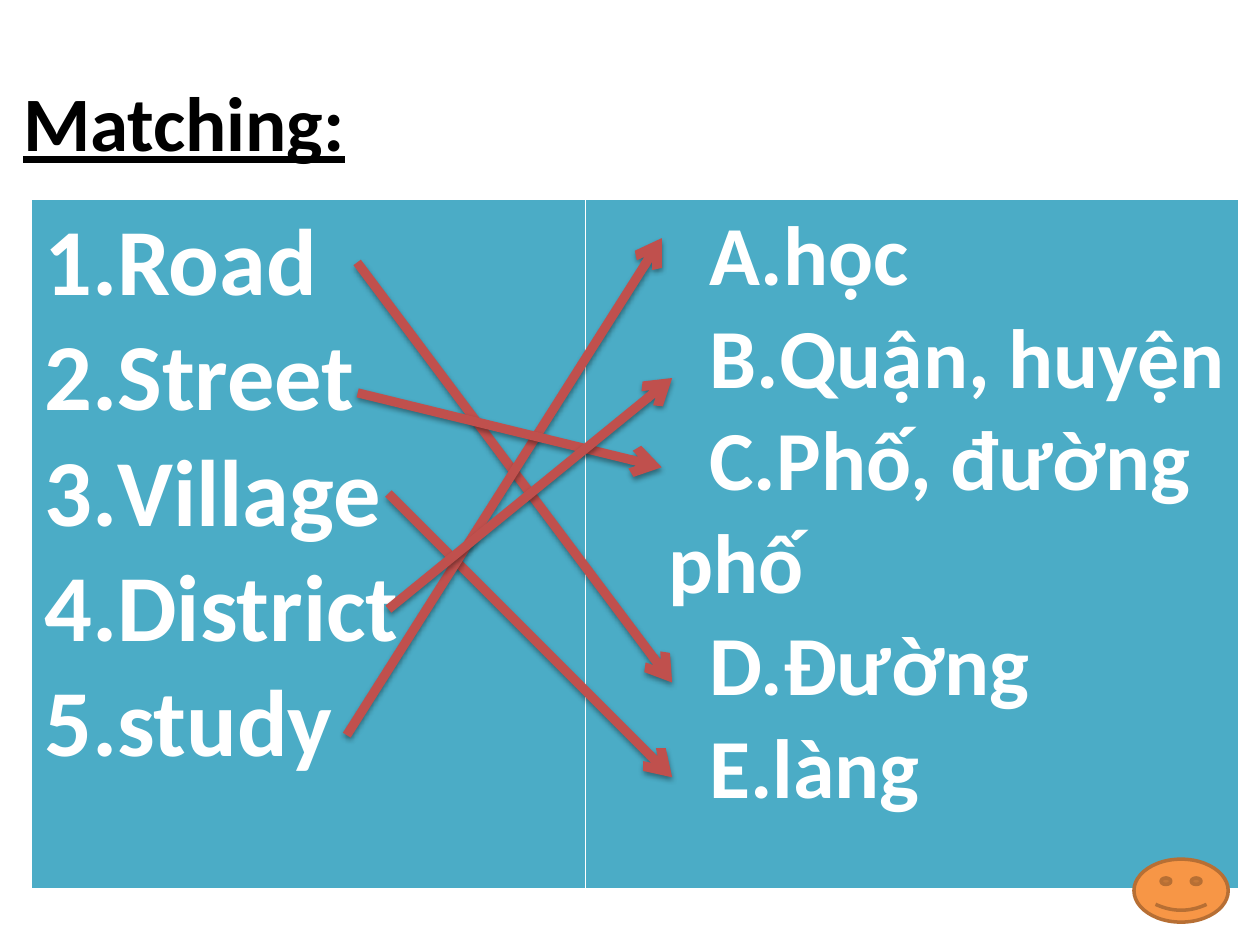
from lxml.etree import SubElement
from pptx import Presentation
from pptx.dml.color import RGBColor
from pptx.enum.shapes import MSO_CONNECTOR as Connector, MSO_SHAPE as Shape
from pptx.enum.text import MSO_ANCHOR as Anchor, PP_ALIGN as Align
from pptx.oxml.ns import qn
from pptx.util import Cm, Pt

FONT = "Calibri"
COLORS = {
    "title": "000000", "text": "FFFFFF", "cell": "4BACC6", "border": "FFFFFF",
    "arrow": "C0504D", "shadow": "000000", "face": "F79646", "face_line": "B76F34",
}
WORDS = ["Road", "Street", "Village", "District", "study"]
MEANINGS = ["học", "Quận, huyện", "Phố, đường phố", "Đường", "làng"]

# Each match runs from a word to its meaning: start x, y, end x, y in cm
MATCHES = [
    (7.2, 5.29, 13.55, 13.76),    # Road - Đường
    (7.83, 9.95, 13.55, 15.67),   # Village - làng
    (6.99, 14.82, 13.34, 4.8),    # study - học
    (7.21, 7.92, 13.34, 9.42),    # Street - Phố
    (7.83, 12.28, 13.55, 7.62),   # District - Quận
]


def color(name):
    return RGBColor.from_string(COLORS[name])


def add_run(paragraph, text, size, color_name):
    run = paragraph.add_run()
    run.text = text
    run.font.name = FONT
    run.font.size = Pt(size)
    run.font.bold = True
    run.font.color.rgb = color(color_name)
    return run


def add_color(parent, name):
    return SubElement(SubElement(parent, qn("a:solidFill")), qn("a:srgbClr"), val=COLORS[name])


def place_title(slide, text):
    title = slide.shapes.title
    title.left, title.top, title.width, title.height = Cm(0.21), Cm(0.85), Cm(24.76), Cm(3.17)
    title.text_frame.vertical_anchor = Anchor.MIDDLE
    paragraph = title.text_frame.paragraphs[0]
    paragraph.alignment = Align.LEFT
    add_run(paragraph, text, 44, "title").font.underline = True


def add_borders(cell):
    properties = cell._tc.get_or_add_tcPr()
    for index, (side, width) in enumerate([("L", 1), ("R", 1), ("T", 1), ("B", 3)]):
        border = SubElement(properties, qn(f"a:ln{side}"), w=str(Pt(width)))
        add_color(border, "border")
        properties.insert(index, border)


def fill_cell(cell, items, size, numbering, indent):
    cell.fill.solid()
    cell.fill.fore_color.rgb = color("cell")
    add_borders(cell)
    frame = cell.text_frame
    for index, item in enumerate(items):
        paragraph = frame.add_paragraph() if index else frame.paragraphs[0]
        add_run(paragraph, item, size, "text")
        properties = paragraph._p.get_or_add_pPr()
        properties.set("marL", str(Cm(1.43)))
        properties.set("indent", str(indent))
        SubElement(properties, qn("a:buFont"), typeface="+mj-lt")
        SubElement(properties, qn("a:buAutoNum"), type=numbering)


def add_word_table(slide):
    frame = slide.shapes.add_table(1, 2, Cm(0.64), Cm(4.02), Cm(24.34), Cm(13.92))
    table = frame.table
    table.columns[0].width, table.columns[1].width = Cm(11.16), Cm(13.18)
    fill_cell(table.cell(0, 0), WORDS, 54, "arabicPeriod", Cm(-1.43))
    fill_cell(table.cell(0, 1), MEANINGS, 48, "alphaUcPeriod", Cm(0.82))


def add_match_arrow(slide, *ends):
    arrow = slide.shapes.add_connector(Connector.STRAIGHT, *map(Cm, ends))
    arrow.line.color.rgb = color("arrow")
    arrow.line.width = Pt(5.25)
    SubElement(arrow.line._get_or_add_ln(), qn("a:tailEnd"), type="arrow")
    effects = SubElement(arrow._element.spPr, qn("a:effectLst"))
    shadow = SubElement(effects, qn("a:outerShdw"), blurRad=str(Pt(3.1)),
                        dist=str(Pt(1.6)), dir="5400000", rotWithShape="0")
    SubElement(add_color_to_shadow(shadow), qn("a:alpha"), val="38000")


def add_color_to_shadow(shadow):
    return SubElement(shadow, qn("a:srgbClr"), val=COLORS["shadow"])


def add_smiley(slide):
    smiley = slide.shapes.add_shape(Shape.SMILEY_FACE, Cm(22.86), Cm(17.32), Cm(1.9), Cm(1.27))
    smiley.shadow.inherit = False
    smiley.fill.solid()
    smiley.fill.fore_color.rgb = color("face")
    smiley.line.color.rgb = color("face_line")
    smiley.line.width = Pt(2)


def main():
    deck = Presentation()
    deck.slide_width, deck.slide_height = Cm(25.4), Cm(19.05)
    slide = deck.slides.add_slide(deck.slide_layouts[5])

    # Heading and the two word columns
    place_title(slide, "Matching:")
    add_word_table(slide)

    # Answers
    for match in MATCHES:
        add_match_arrow(slide, *match)

    add_smiley(slide)
    deck.save("out.pptx")


if __name__ == "__main__":
    main()
